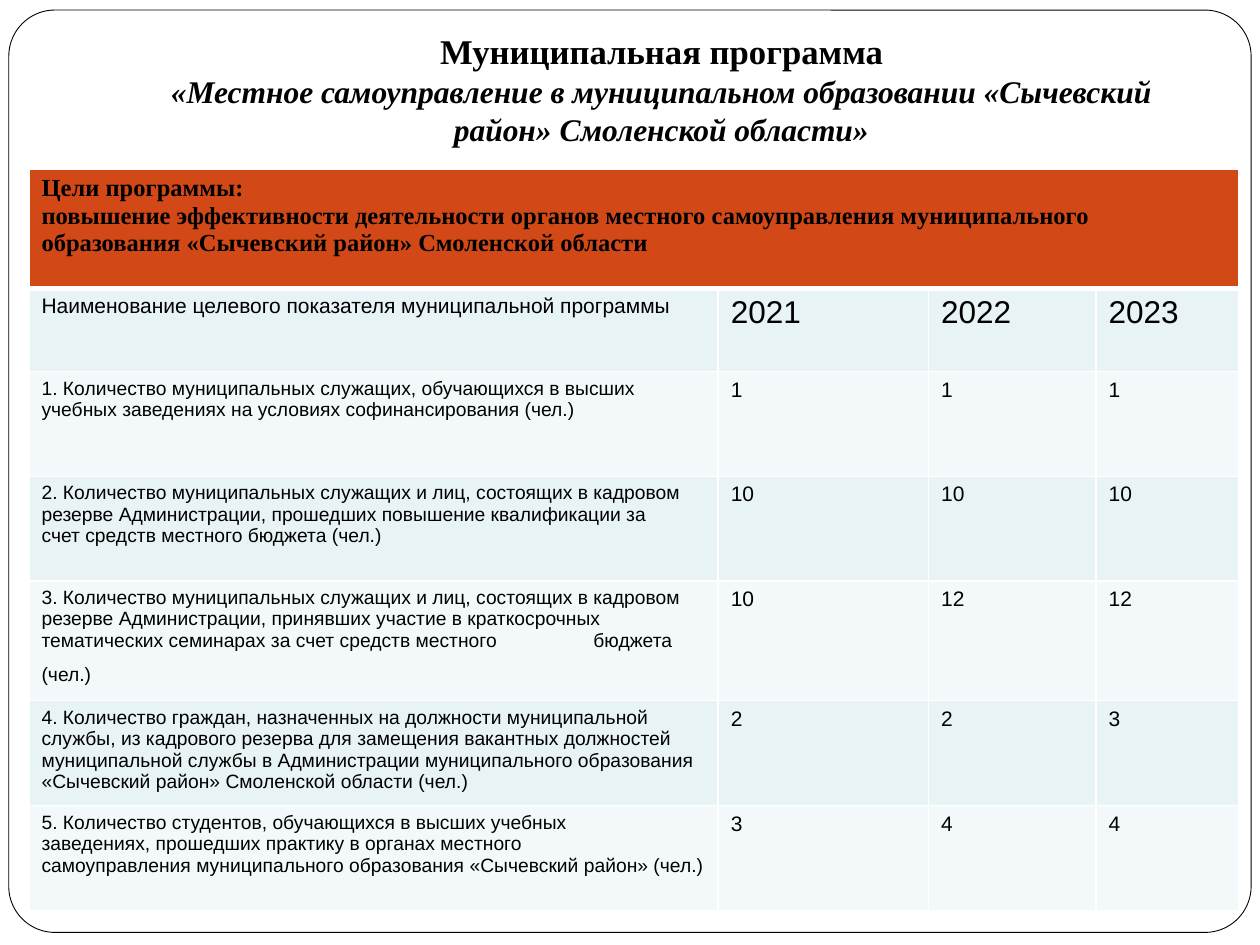
from lxml.etree import SubElement
from pptx import Presentation
from pptx.dml.color import RGBColor
from pptx.enum.shapes import MSO_SHAPE
from pptx.enum.text import MSO_ANCHOR, PP_ALIGN
from pptx.oxml.ns import qn
from pptx.util import Inches, Pt

BLACK = RGBColor(0x00, 0x00, 0x00)
WHITE = RGBColor(0xFF, 0xFF, 0xFF)
RUST = RGBColor(0xD3, 0x48, 0x17)
MIST = RGBColor(0xE7, 0xF3, 0xF4)
PALE = RGBColor(0xF3, 0xF9, 0xFA)

SERIF = "Times New Roman"
SANS = "Arial"

TITLE = [
    ("Муниципальная программа", 19.8, False),
    ("«Местное самоуправление в муниципальном образовании «Сычевский район» Смоленской области»", 18, True),
]
GOALS = [
    "Цели программы:",
    "повышение эффективности деятельности органов местного самоуправления муниципального образования «Сычевский район» Смоленской области",
]
HEAD = ("Наименование целевого показателя муниципальной программы", "2021", "2022", "2023")
ROWS = [
    ("1. Количество муниципальных служащих, обучающихся в высших учебных заведениях на условиях софинансирования (чел.)", "1", "1", "1"),
    ("2. Количество муниципальных служащих и лиц, состоящих в кадровом резерве Администрации, прошедших повышение квалификации за\nсчет средств местного бюджета (чел.)", "10", "10", "10"),
    ("3. Количество муниципальных служащих и лиц, состоящих в кадровом резерве Администрации, принявших участие в краткосрочных тематических семинарах за счет средств местного\tбюджета (чел.)", "10", "12", "12"),
    ("4. Количество граждан, назначенных на должности муниципальной службы, из кадрового резерва для замещения вакантных должностей муниципальной службы в Администрации муниципального образования «Сычевский район» Смоленской области (чел.)", "2", "2", "3"),
    ("5. Количество студентов, обучающихся в высших учебных\nзаведениях, прошедших практику в органах местного\nсамоуправления муниципального образования «Сычевский район» (чел.)", "3", "4", "4"),
]
WIDTHS = (5.47, 1.67, 1.33, 1.13)
HEIGHTS = (0.95, 0.66, 0.83, 0.83, 0.9, 0.83, 0.83)


def style(para, face, size, bold=False, slant=False):
    for run in para.runs:
        font = run.font
        font.name, font.size = face, Pt(size)
        font.bold, font.italic = bold, slant
        font.color.rgb = BLACK


def add_frame(slide, box):
    frame = slide.shapes.add_shape(MSO_SHAPE.ROUNDED_RECTANGLE, *map(Inches, box))
    frame.adjustments[0] = 0.05
    frame.shadow.inherit = False
    frame.fill.solid()
    frame.fill.fore_color.rgb = WHITE
    frame.line.color.rgb = BLACK
    frame.line.width = Pt(0.5)


def add_title(slide, box):
    body = slide.shapes.add_textbox(*map(Inches, box)).text_frame
    body.word_wrap = True
    body.vertical_anchor = MSO_ANCHOR.BOTTOM
    body.margin_bottom = Inches(0.38)
    body.text = "\n".join(text for text, size, slant in TITLE)
    for para, (text, size, slant) in zip(body.paragraphs, TITLE):
        para.alignment = PP_ALIGN.CENTER
        style(para, SERIF, size, True, slant)


def add_edge(cell, side, width):
    line = SubElement(cell._tc.get_or_add_tcPr(), qn(f"a:ln{side}"), w=str(Pt(width)))
    fill = SubElement(line, qn("a:solidFill"))
    SubElement(fill, qn("a:srgbClr"), val=str(WHITE))


def paint(cell, row):
    for side in "LRTB":
        thick = (row, side) in ((0, "B"), (1, "T"))
        add_edge(cell, side, 3 if thick else 1)
    cell.fill.solid()
    cell.fill.fore_color.rgb = RUST if row == 0 else MIST if row % 2 else PALE


def add_tab(para, place):
    stops = SubElement(para._p.get_or_add_pPr(), qn("a:tabLst"))
    SubElement(stops, qn("a:tab"), pos=str(Inches(place)), algn="l")


def add_goals(slide, box):
    grid = slide.shapes.add_table(len(HEIGHTS), len(WIDTHS), *map(Inches, box)).table
    for col, width in zip(grid.columns, WIDTHS):
        col.width = Inches(width)
    for row, height in zip(grid.rows, HEIGHTS):
        row.height = Inches(height)
    for row in range(len(HEIGHTS)):
        for col in range(len(WIDTHS)):
            paint(grid.cell(row, col), row)

    top = grid.cell(0, 0)
    top.merge(grid.cell(0, len(WIDTHS) - 1))
    top.text_frame.text = "\n".join(GOALS)
    for para in top.text_frame.paragraphs:
        style(para, SERIF, 14, True)

    for row, texts in enumerate([HEAD] + ROWS, 1):
        sizes = (12, 18) if row == 1 else (11, 12)
        for col, text in enumerate(texts):
            para = grid.cell(row, col).text_frame.paragraphs[0]
            para.text = text.replace("\n", "\v")
            style(para, SANS, sizes[min(col, 1)])
            if "\t" in text:
                add_tab(para, 4.38)
                tail = para.add_run()
                tail.text = " "
                tail.font.size = Pt(18)


def main():
    deck = Presentation()
    deck.slide_width, deck.slide_height = Inches(10), Inches(7.5)
    slide = deck.slides.add_slide(deck.slide_layouts[6])
    add_frame(slide, (0.07, 0.08, 9.86, 7.32))
    add_title(slide, (1, 0.3, 8.5, 1.25))
    add_goals(slide, (0.23, 1.34, sum(WIDTHS), sum(HEIGHTS)))
    deck.save("out.pptx")


if __name__ == "__main__":
    main()
